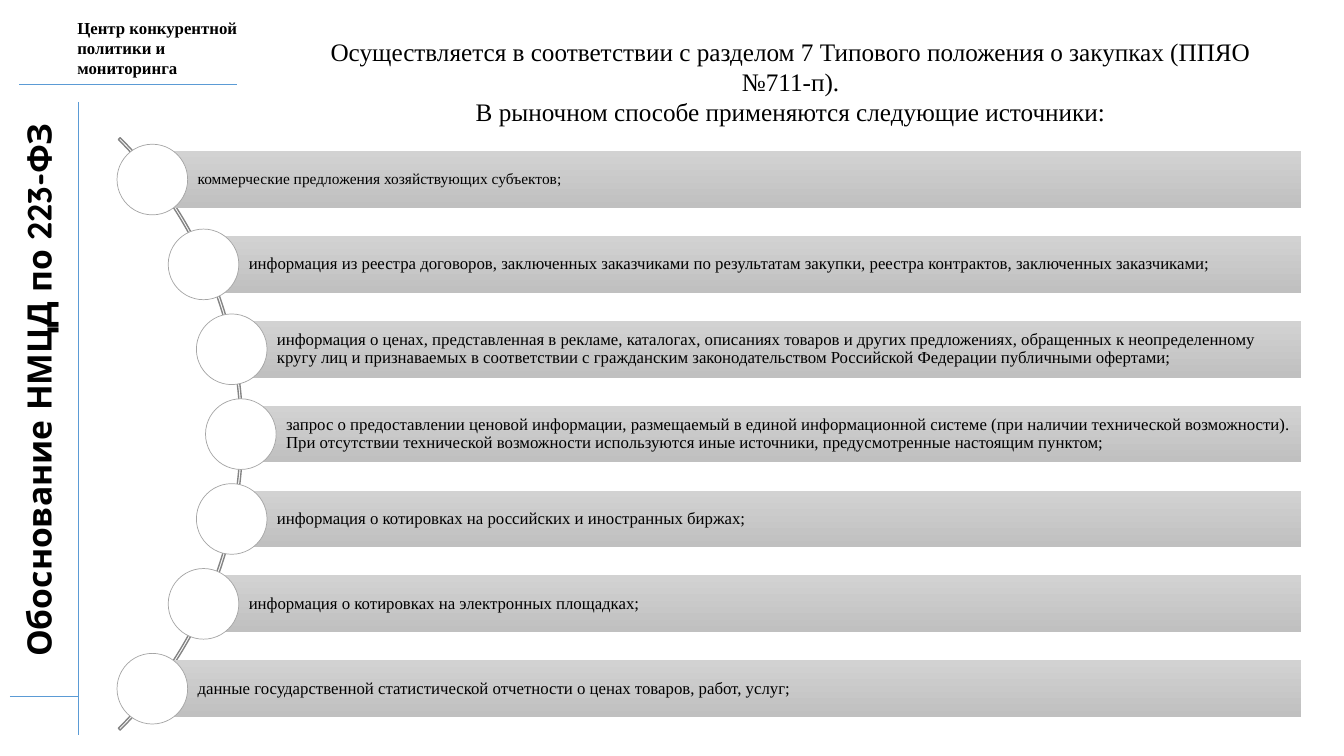
from lxml.etree import SubElement
from pptx import Presentation
from pptx.dml.color import RGBColor
from pptx.enum.shapes import MSO_CONNECTOR, MSO_SHAPE
from pptx.enum.text import MSO_ANCHOR, MSO_AUTO_SIZE, PP_ALIGN
from pptx.oxml.ns import qn
from pptx.util import Cm, Pt

BLACK = RGBColor(0x00, 0x00, 0x00)
WHITE = RGBColor(0xFF, 0xFF, 0xFF)
BLUE = RGBColor(0x5B, 0x9B, 0xD5)
ARC_GRAY = RGBColor(0x84, 0x84, 0x84)
RING_GRAY = RGBColor(0xA5, 0xA5, 0xA5)
BAR_TOP_GRAY = RGBColor(0xD2, 0xD2, 0xD2)
BAR_BOTTOM_GRAY = RGBColor(0xC0, 0xC0, 0xC0)
SERIF = "Times New Roman"

SOURCES = [
    "коммерческие предложения хозяйствующих субъектов;",
    "информация из реестра договоров, заключенных заказчиками по результатам закупки, "
    "реестра контрактов, заключенных заказчиками;",
    "информация о ценах, представленная в рекламе, каталогах, описаниях товаров и других "
    "предложениях, обращенных к неопределенному кругу лиц и признаваемых в соответствии с "
    "гражданским законодательством Российской Федерации публичными офертами;",
    "запрос о предоставлении ценовой информации, размещаемый в единой информационной системе "
    "(при наличии технической возможности). При отсутствии технической возможности "
    "используются иные источники, предусмотренные настоящим пунктом;",
    "информация о котировках на российских и иностранных биржах;",
    "информация о котировках на электронных площадках;",
    "данные государственной статистической отчетности о ценах товаров, работ, услуг;",
]


def write(frame, lines, size, font=SERIF, bold=False, align=PP_ALIGN.LEFT):
    frame.text = "\n".join(lines)
    for paragraph in frame.paragraphs:
        paragraph.alignment = align
        paragraph.font.name = font
        paragraph.font.size = Pt(size)
        paragraph.font.bold = bold
        paragraph.font.color.rgb = BLACK


deck = Presentation()
deck.slide_width = Cm(33.87)
deck.slide_height = Cm(19.05)
page = deck.slides.add_slide(deck.slide_layouts[6])

department = page.shapes.add_textbox(Cm(1.7), Cm(0.28), Cm(5.26), Cm(1.85)).text_frame
department.word_wrap = True
department.vertical_anchor = MSO_ANCHOR.MIDDLE
write(department, ["Центр конкурентной", "политики и мониторинга"], 12, bold=True)

for ends in [(0.48, 2.13, 5.97, 2.13), (1.98, 2.57, 1.98, 18.52), (0.25, 17.55, 1.96, 17.55)]:
    rule = page.shapes.add_connector(MSO_CONNECTOR.STRAIGHT, *[Cm(value) for value in ends])
    rule.line.color.rgb = BLUE
    rule.line.width = Pt(0.5)
    SubElement(rule._element.spPr, qn("a:effectLst"))

topic = page.shapes.add_textbox(Cm(0.33), Cm(3.02), Cm(1.55), Cm(13.61)).text_frame
topic.word_wrap = False
topic.auto_size = MSO_AUTO_SIZE.SHAPE_TO_FIT_TEXT
topic._txBody.bodyPr.set("vert", "vert270")
write(topic, ["Обоснование НМЦД по 223-ФЗ"], 24, "Quicksand", True, PP_ALIGN.CENTER)

arc = page.shapes.add_shape(MSO_SHAPE.BLOCK_ARC, Cm(-14.99), Cm(0.38), Cm(21.11), Cm(21.11))
for index, value in enumerate([189, 27, 0.003]):
    arc.adjustments[index] = value
arc.shadow.inherit = False
arc.fill.background()
arc.line.color.rgb = ARC_GRAY
arc.line.width = Pt(1)

BAR_LEFTS = [3.84, 5.13, 5.84, 6.07, 5.84, 5.13, 3.84]
BAR_RIGHT, BAR_HEIGHT, FIRST_TOP, LAST_TOP = 32.8, 1.43, 3.81, 16.64
STEP = (LAST_TOP - FIRST_TOP) / (len(SOURCES) - 1)
DIAMETER = 1.78

for index, (left, source) in enumerate(zip(BAR_LEFTS, SOURCES)):
    top = FIRST_TOP + index * STEP
    bar = page.shapes.add_shape(
        MSO_SHAPE.RECTANGLE, Cm(left), Cm(top), Cm(BAR_RIGHT - left), Cm(BAR_HEIGHT))
    bar.shadow.inherit = False
    bar.line.fill.background()
    bar.fill.gradient()
    bar.fill.gradient_angle = 270
    for stop, position, color in zip(
            bar.fill.gradient_stops, (0, 1), (BAR_TOP_GRAY, BAR_BOTTOM_GRAY)):
        stop.position = position
        stop.color.rgb = color
    frame = bar.text_frame
    frame.word_wrap = True
    frame.vertical_anchor = MSO_ANCHOR.MIDDLE
    frame.margin_left = Cm(1.14)
    frame.margin_right = frame.margin_top = frame.margin_bottom = Cm(0.08)
    write(frame, [source], 11 if index == 0 else 12)
    frame.paragraphs[0].line_spacing = 0.9

    circle = page.shapes.add_shape(
        MSO_SHAPE.OVAL, Cm(left - DIAMETER / 2), Cm(top + (BAR_HEIGHT - DIAMETER) / 2),
        Cm(DIAMETER), Cm(DIAMETER))
    circle.shadow.inherit = False
    circle.fill.solid()
    circle.fill.fore_color.rgb = WHITE
    circle.line.color.rgb = RING_GRAY
    circle.line.width = Pt(0.5)

heading = page.shapes.add_textbox(Cm(7.49), Cm(0.79), Cm(24.87), Cm(2.57)).text_frame
heading.word_wrap = True
heading.auto_size = MSO_AUTO_SIZE.SHAPE_TO_FIT_TEXT
write(heading, [
    "Осуществляется в соответствии с разделом 7 Типового положения о закупках (ППЯО №711-п).",
    "В рыночном способе применяются следующие источники:",
], 18, align=PP_ALIGN.CENTER)

deck.save("out.pptx")
